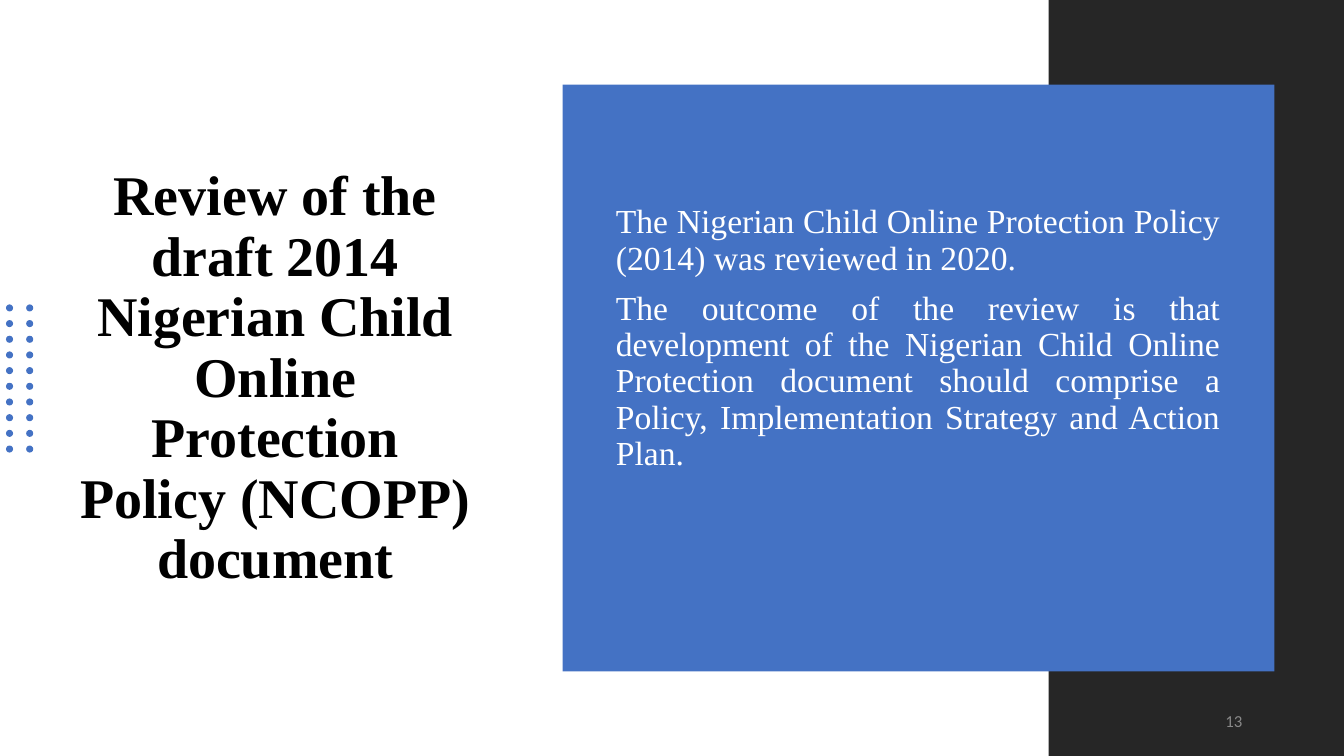
"""Build the slide on the review of the draft 2014 NCOPP document."""
from pptx import Presentation
from pptx import util as u
from pptx.dml.color import RGBColor
from pptx.enum import shapes, text

COLORS = {"blue": "4472C4", "dark": "262626", "black": "000000",
          "white": "FFFFFF", "grey": "898989"}
SERIF = "Times New Roman"


def add_filled(parent, kind, box, color):
    sp = parent.add_shape(kind, *map(u.Inches, box))
    sp.shadow.inherit = False
    sp.fill.solid()
    sp.fill.fore_color.rgb = RGBColor.from_string(COLORS[color])
    sp.line.fill.background()


def add_text(parent, box, lines, color, para, font, bottom=0.05):
    tf = parent.add_textbox(*map(u.Inches, box)).text_frame
    tf.word_wrap = True
    tf.vertical_anchor = text.MSO_ANCHOR.MIDDLE
    tf.margin_bottom = u.Inches(bottom)
    for i, line in enumerate(lines):
        p = tf.add_paragraph() if i else tf.paragraphs[0]
        r = p.add_run()
        r.text = line
        r.font.color.rgb = RGBColor.from_string(COLORS[color])
        for target, values in ((p, para), (r.font, font)):
            for name, value in values.items():
                setattr(target, name, value)


prs = Presentation()
prs.slide_width, prs.slide_height = u.Inches(13.33), u.Inches(7.5)
s = prs.slides.add_slide(prs.slide_layouts[6])

add_text(s.shapes, (0.65, 1.14, 4.16, 5.24),
         ["Review of the draft 2014 Nigerian Child Online Protection Policy (NCOPP) document"],
         "black", {"alignment": text.PP_ALIGN.CENTER, "line_spacing": 0.9},
         {"name": SERIF, "size": u.Pt(40), "bold": True})

dots = s.shapes.add_group_shape()
rows, first_top, last_top = 10, 3.02, 4.42
for row in range(rows):
    top = first_top + row * (last_top - first_top) / (rows - 1)
    for left in (0.06, 0.26):
        add_filled(dots.shapes, shapes.MSO_SHAPE.OVAL, (left, top, 0.07, 0.07), "blue")

for box, color in (((10.4, 0, 2.93, 7.5), "dark"), ((5.58, 0.84, 7.06, 5.82), "blue")):
    add_filled(s.shapes, shapes.MSO_SHAPE.RECTANGLE, box, color)

add_text(s.shapes, (6.01, 1.29, 6.19, 4.97),
         ["The Nigerian Child Online Protection Policy (2014) was reviewed in 2020.",
          "The outcome of the review is that development of the Nigerian Child Online "
          "Protection document should comprise a Policy, Implementation Strategy and "
          "Action Plan."],
         "white", {"alignment": text.PP_ALIGN.JUSTIFY, "line_spacing": 0.9,
                   "space_before": u.Pt(10)},
         {"name": SERIF, "size": u.Pt(24)}, bottom=0.88)

add_text(s.shapes, (9.42, 6.95, 3, 0.4), ["13"], "grey",
         {"alignment": text.PP_ALIGN.RIGHT}, {"name": "Calibri", "size": u.Pt(12)})

prs.save("out.pptx")
